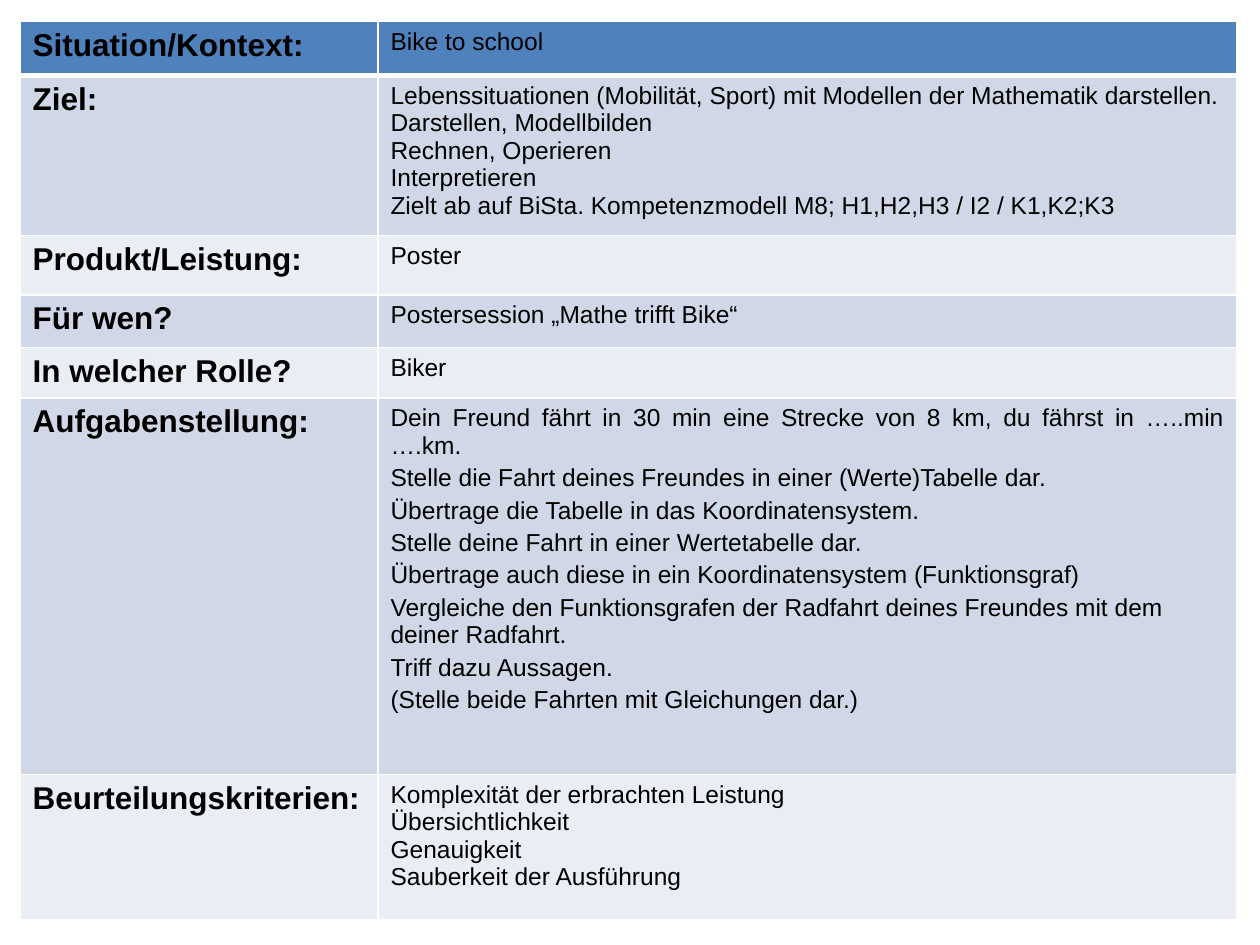
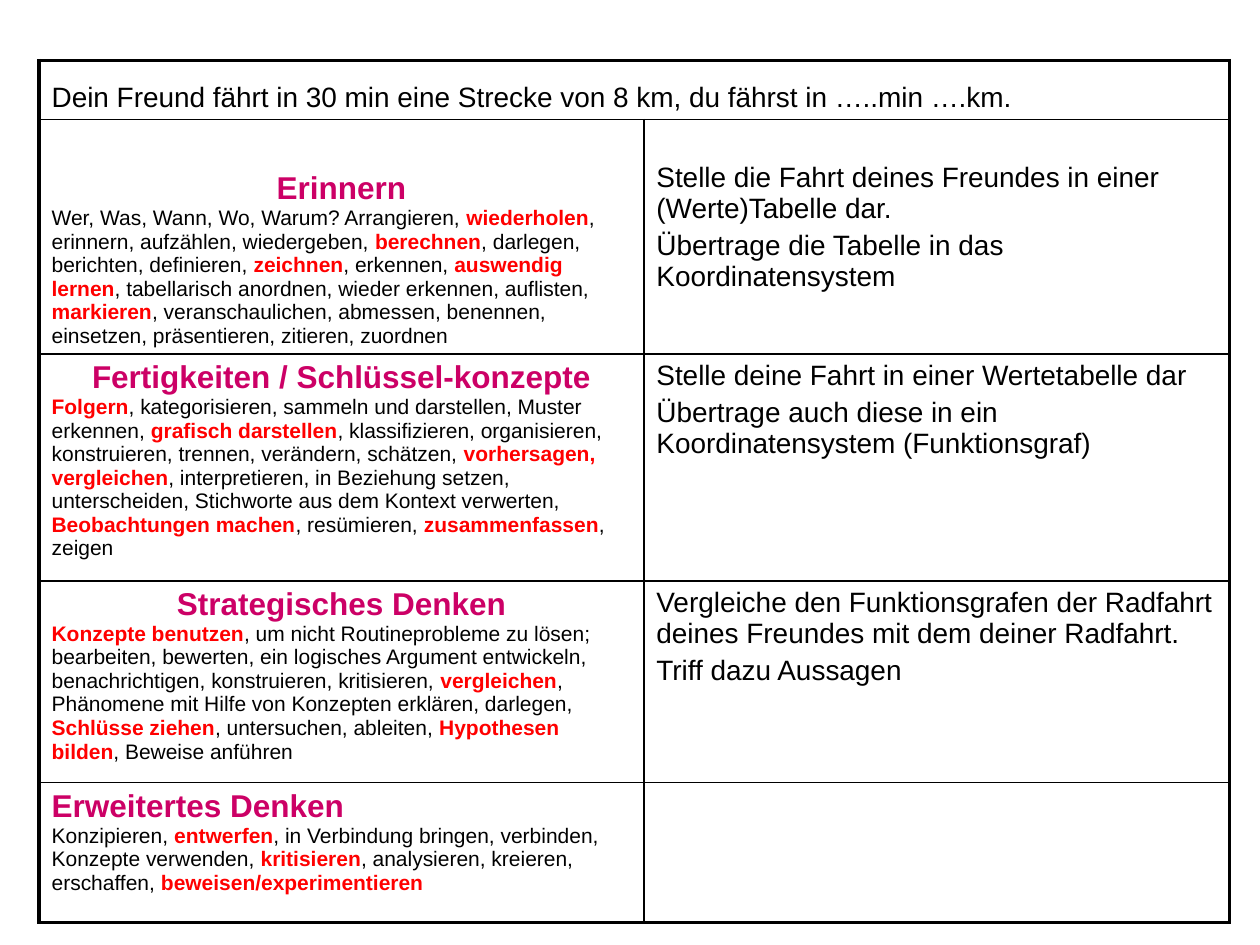
from lxml.etree import SubElement
from pptx import Presentation
from pptx.dml.color import RGBColor
from pptx.enum.text import MSO_ANCHOR, PP_ALIGN
from pptx.oxml.ns import qn
from pptx.util import Inches, Pt

FONT = "Arial"
COLORS = {
    "text": "000000",
    "heading": "CC0066",
    "keyword": "FF0000",
    "header": "4F81BD",
    "band_dark": "D0D8E8",
    "band_light": "E9EDF4",
    "grid_light": "FFFFFF",
    "grid_dark": "000000",
}

TASK = "Dein Freund fährt in 30 min eine Strecke von 8 km, du fährst in …..min ….km."

PLAN = [
    ("Situation/Kontext:", ["Bike to school"], 0.43),
    ("Ziel:", [
        "Lebenssituationen (Mobilität, Sport) mit Modellen der Mathematik darstellen.",
        "Darstellen, Modellbilden",
        "Rechnen, Operieren",
        "Interpretieren",
        "Zielt ab auf BiSta. Kompetenzmodell M8; H1,H2,H3 / I2 / K1,K2;K3",
    ], 1.27),
    ("Produkt/Leistung:", ["Poster"], 0.47),
    ("Für wen?", ["Postersession „Mathe trifft Bike“"], 0.42),
    ("In welcher Rolle?", ["Biker"], 0.4),
    ("Aufgabenstellung:", [
        TASK,
        "Stelle die Fahrt deines Freundes in einer (Werte)Tabelle dar.",
        "Übertrage die Tabelle in das Koordinatensystem.",
        "Stelle deine Fahrt in einer Wertetabelle dar.",
        "Übertrage auch diese in ein Koordinatensystem (Funktionsgraf)",
        "Vergleiche den Funktionsgrafen der Radfahrt deines Freundes mit dem deiner Radfahrt.",
        "Triff dazu Aussagen.",
        "(Stelle beide Fahrten mit Gleichungen dar.)",
    ], 2.99),
    ("Beurteilungskriterien:", [
        "Komplexität der erbrachten Leistung",
        "Übersichtlichkeit",
        "Genauigkeit",
        "Sauberkeit der Ausführung",
    ], 1.15),
]

LEVELS = [
    ("Erinnern",
     "Wer, Was, Wann, Wo, Warum? Arrangieren, *wiederholen*, erinnern, aufzählen, "
     "wiedergeben, *berechnen*, darlegen, berichten, definieren, *zeichnen*, erkennen, "
     "*auswendig lernen*, tabellarisch anordnen, wieder erkennen, auflisten, *markieren*, "
     "veranschaulichen, abmessen, benennen, einsetzen, präsentieren, zitieren, zuordnen",
     ["Stelle die Fahrt deines Freundes in einer (Werte)Tabelle dar.",
      "Übertrage die Tabelle in das Koordinatensystem"], 1.86),
    ("Fertigkeiten / Schlüssel-konzepte",
     "*Folgern*, kategorisieren, sammeln und darstellen, Muster erkennen, "
     "*grafisch darstellen*, klassifizieren, organisieren, konstruieren, trennen, "
     "verändern, schätzen, *vorhersagen, vergleichen*, interpretieren, in Beziehung "
     "setzen, unterscheiden, Stichworte aus dem Kontext verwerten, "
     "*Beobachtungen machen*, resümieren, *zusammenfassen*, zeigen",
     ["Stelle deine Fahrt in einer Wertetabelle dar",
      "Übertrage auch diese in ein Koordinatensystem (Funktionsgraf)"], 1.8),
    ("Strategisches Denken",
     "*Konzepte benutzen*, um nicht Routineprobleme zu lösen; bearbeiten, bewerten, ein "
     "logisches Argument entwickeln, benachrichtigen, konstruieren, kritisieren, "
     "*vergleichen*, Phänomene mit Hilfe von Konzepten erklären, darlegen, "
     "*Schlüsse ziehen*, untersuchen, ableiten, *Hypothesen bilden*, Beweise anführen",
     ["Vergleiche den Funktionsgrafen der Radfahrt deines Freundes mit dem deiner Radfahrt.",
      "Triff dazu Aussagen"], 1.6),
    ("Erweitertes Denken",
     "Konzipieren, *entwerfen*, in Verbindung bringen, verbinden, Konzepte verwenden, "
     "*kritisieren*, analysieren, kreieren, erschaffen, *beweisen/experimentieren*",
     [], 1.11),
]


def rgb(name):
    return RGBColor.from_string(COLORS[name])


def format_run(r, size, color="text", bold=False):
    r.font.name = FONT
    r.font.size = Pt(size)
    r.font.bold = bold
    r.font.color.rgb = rgb(color)


def write_lines(cell, lines, size, color="text", bold=False, gap=0):
    tf = cell.text_frame
    tf.text = "\n".join(lines)
    for i, p in enumerate(tf.paragraphs):
        if i:
            p.space_before = Pt(gap)
        for r in p.runs:
            format_run(r, size, color, bold)


def add_keyword_paragraph(cell, text, size):
    p = cell.text_frame.add_paragraph()
    for i, part in enumerate(text.split("*")):
        if part:
            r = p.add_run()
            r.text = part
            is_keyword = i % 2 == 1
            format_run(r, size, "keyword" if is_keyword else "text", is_keyword)


def set_borders(cell, color, left=1, right=1, top=1, bottom=1):
    tcPr = cell._tc.get_or_add_tcPr()
    for side, width in zip("LRTB", (left, right, top, bottom)):
        ln = SubElement(tcPr, qn(f"a:ln{side}"), w=str(Pt(width)))
        fill = SubElement(ln, qn("a:solidFill"))
        SubElement(fill, qn("a:srgbClr"), val=COLORS[color])


def add_grid(prs, left, top, widths, heights):
    s = prs.slides.add_slide(prs.slide_layouts[6])
    table = s.shapes.add_table(
        len(heights), len(widths), Inches(left), Inches(top),
        Inches(sum(widths)), Inches(sum(heights))).table
    table.first_row = False
    table.horz_banding = False
    for column, width in zip(table.columns, widths):
        column.width = Inches(width)
    for row, height in zip(table.rows, heights):
        row.height = Inches(height)
    return table


def add_plan_slide(prs):
    table = add_grid(prs, 0.16, 0.17, [2.84, 6.82], [height for *_, height in PLAN])
    for i, (label, lines, _) in enumerate(PLAN):
        label_cell, content_cell = table.rows[i].cells
        write_lines(label_cell, [label], 18, bold=True)
        is_task = lines[0] == TASK
        write_lines(content_cell, lines, 14, gap=2.8 if is_task else 0)
        if is_task:
            content_cell.text_frame.paragraphs[0].alignment = PP_ALIGN.JUSTIFY
        band = "header" if i == 0 else "band_dark" if i % 2 else "band_light"
        for cell in (label_cell, content_cell):
            set_borders(cell, "grid_light", top=3 if i == 1 else 1, bottom=3 if i == 0 else 1)
            cell.fill.solid()
            cell.fill.fore_color.rgb = rgb(band)


def add_levels_slide(prs):
    heights = [0.47] + [height for *_, height in LEVELS]
    table = add_grid(prs, 0.31, 0.48, [4.8, 4.65], heights)
    outer = 2.25
    last = len(LEVELS)
    for i, row in enumerate(table.rows):
        for j, cell in enumerate(row.cells):
            set_borders(cell, "grid_dark",
                        left=outer if j == 0 else 1,
                        right=outer if j == 1 or i == 0 else 1,
                        top=outer if i == 0 else 1,
                        bottom=outer if i == last else 1)
            cell.fill.background()

    task_cell = table.cell(0, 0)
    task_cell.merge(table.cell(0, 1))
    write_lines(task_cell, [TASK], 16)
    task_cell.text_frame.paragraphs[0].alignment = PP_ALIGN.JUSTIFY
    task_cell.vertical_anchor = MSO_ANCHOR.BOTTOM

    for i, (level, verbs, tasks, _) in enumerate(LEVELS, 1):
        level_cell, tasks_cell = table.rows[i].cells
        write_lines(level_cell, [level], 18, "heading", True)
        if i < last:
            level_cell.text_frame.paragraphs[0].alignment = PP_ALIGN.CENTER
        add_keyword_paragraph(level_cell, verbs, 12)
        if tasks:
            write_lines(tasks_cell, tasks, 16, gap=3.2)

    table.cell(1, 0).vertical_anchor = MSO_ANCHOR.BOTTOM
    table.cell(1, 1).margin_top = Inches(0.34)


def main():
    prs = Presentation()
    prs.slide_width = Inches(10)
    prs.slide_height = Inches(7.5)
    add_plan_slide(prs)
    add_levels_slide(prs)
    prs.save("out.pptx")


if __name__ == "__main__":
    main()
